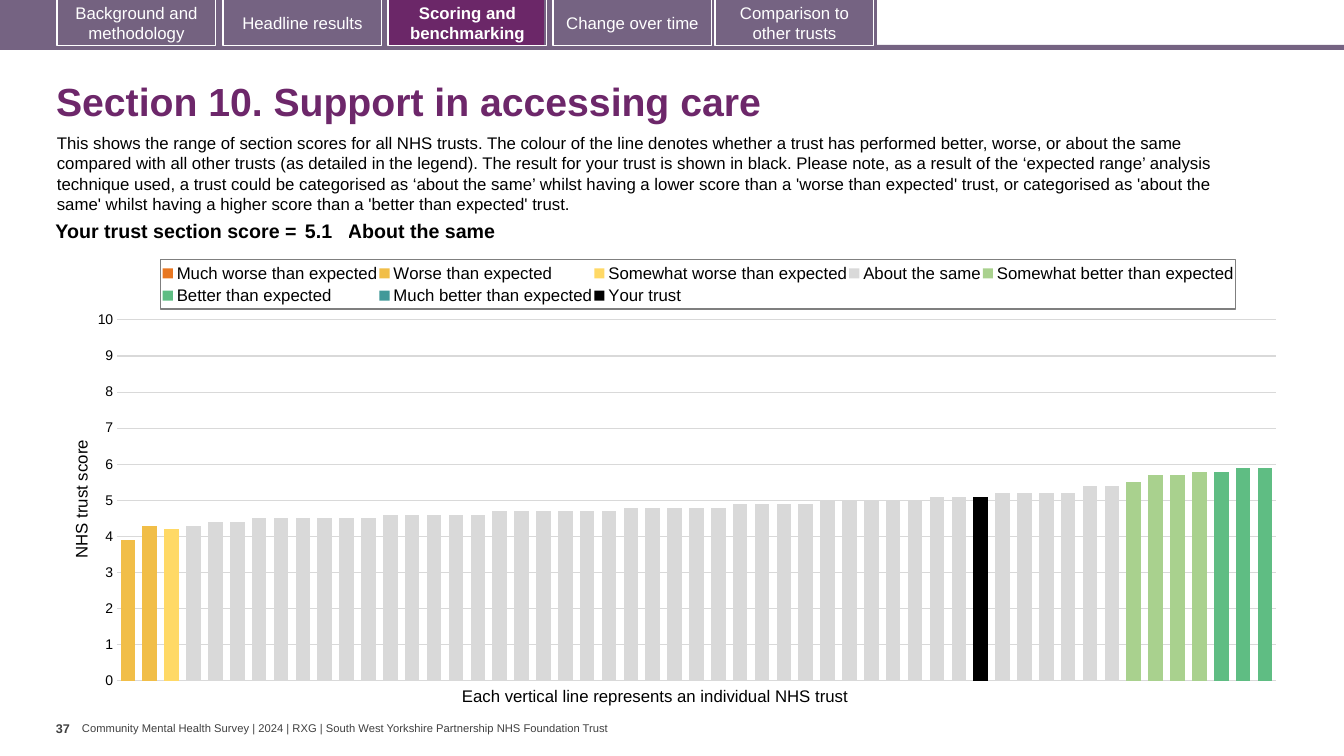
"""Build the section score slide with its benchmarking chart."""
from copy import deepcopy

from lxml import etree
from pptx import Presentation
from pptx.chart.data import CategoryChartData
from pptx.dml.color import RGBColor
from pptx.enum.chart import XL_CHART_TYPE, XL_LEGEND_POSITION, XL_TICK_MARK
from pptx.enum.shapes import MSO_SHAPE
from pptx.enum.text import MSO_ANCHOR, MSO_AUTO_SIZE, PP_ALIGN
from pptx.oxml import parse_xml
from pptx.oxml.ns import nsdecls, qn
from pptx.util import Pt

COLUMN = XL_CHART_TYPE.COLUMN_CLUSTERED
TOP = XL_LEGEND_POSITION.TOP
NO_TICK = XL_TICK_MARK.NONE
RECT = MSO_SHAPE.RECTANGLE
MIDDLE, ANCHOR_TOP = MSO_ANCHOR.MIDDLE, MSO_ANCHOR.TOP
NO_FIT = MSO_AUTO_SIZE.NONE
LEFT, CENTER, RIGHT = PP_ALIGN.LEFT, PP_ALIGN.CENTER, PP_ALIGN.RIGHT

BLACK = RGBColor(0, 0, 0)
WHITE = RGBColor(255, 255, 255)
DARK_GREY = RGBColor(0x40, 0x40, 0x40)
GRID_GREY = RGBColor(0xD9, 0xD9, 0xD9)
BAR = RGBColor(0x75, 0x63, 0x82)
TAB = RGBColor(0x74, 0x62, 0x80)
ACTIVE = RGBColor(0x6B, 0x27, 0x68)
TITLE = RGBColor(0x6D, 0x27, 0x6A)

PX = 914400 / 100.8
SLIDE = (1344, 756)
CHART = (68, 249, 1225, 448)
FONT = "Arial"

HEADING = "Section 10. Support in accessing care"
INTRO = (
    "This shows the range of section scores for all NHS trusts. The colour of the line "
    "denotes whether a trust has performed better, worse, or about the same compared with "
    "all other trusts (as detailed in the legend). The result for your trust is shown in "
    "black. Please note, as a result of the ‘expected range’ analysis technique used, a "
    "trust could be categorised as ‘about the same’ whilst having a lower score than a "
    "'worse than expected' trust, or categorised as 'about the same' whilst having a higher "
    "score than a 'better than expected' trust."
)
X_CAPTION = "Each vertical line represents an individual NHS trust"
Y_CAPTION = "NHS trust score"
PAGE = "37"
FOOTER = ("Community Mental Health Survey | 2024 | RXG | "
          "South West Yorkshire Partnership NHS Foundation Trust")
BANDS = [
    ((0, 45, 1344, 5), BAR),
    ((0, 0, 877, 47), BAR),
    ((59, 0, 155, 46), TAB),
    ((389, 0, 155, 46), ACTIVE),
]
TABS = [
    (57, "Background and methodology", TAB, False),
    (223, "Headline results", None, False),
    (388, "Scoring and benchmarking", None, True),
    (553, "Change over time", BAR, False),
    (715, "Comparison to other trusts", BAR, False),
]
SCORE_ROW = [
    ("Your trust section score =", 265, RIGHT, 4),
    ("5.1", 47, LEFT, 4),
    ("About the same", 867, LEFT, 0),
]
TRUSTS = 53
ABOUT_SAME = (
    [4.3] + [4.4] * 2 + [4.5] * 6 + [4.6] * 5 + [4.7] * 6 + [4.8] * 5 + [4.9] * 4
    + [5] * 5 + [5.1] * 3 + [5.2] * 4 + [5.4] * 2
)
SERIES = [
    ("Much worse than expected", "E87722", 0, []),
    ("Worse than expected", "F1BE48", 0, [3.9, 4.3]),
    ("Somewhat worse than expected", "FFD966", 2, [4.2]),
    ("About the same", "D9D9D9", 3, ABOUT_SAME),
    ("Somewhat better than expected", "A9D18E", 46, [5.5, 5.7, 5.7, 5.8]),
    ("Better than expected", "5FBD83", 50, [5.8, 5.9, 5.9]),
    ("Much better than expected", "419999", 0, []),
    ("Your trust", "000000", 39, [5.1]),
]


def emu(*lengths):
    return [round(n * PX) for n in lengths]


def style(font, size, color, bold=False):
    font.name, font.size, font.bold = FONT, Pt(size), bold
    font.color.rgb = color


def write(tf, text, size, color, bold=False, align=LEFT):
    p = tf.paragraphs[0]
    p.text, p.alignment = text, align
    style(p.font, size, color, bold)
    return p


def add_rect(slide, box, fill, line=None):
    sp = slide.shapes.add_shape(RECT, *emu(*box))
    sp.shadow.inherit = False
    if fill is None:
        sp.fill.background()
    else:
        sp.fill.solid()
        sp.fill.fore_color.rgb = fill
    if line is None:
        sp.line.fill.background()
    else:
        sp.line.color.rgb, sp.line.width = line, Pt(0.75)
    return sp


def add_text(slide, box, text, size, color, bold=False, wrap=False, inset=None, anchor=ANCHOR_TOP):
    tf = slide.shapes.add_textbox(*emu(*box)).text_frame
    tf.word_wrap, tf.vertical_anchor = wrap, anchor
    if inset is not None:
        tf.margin_left = tf.margin_right = 0
        tf.margin_top = tf.margin_bottom = emu(inset)[0]
    write(tf, text, size, color, bold)


def add_score_row(slide):
    widths = emu(*[width for _, width, _, _ in SCORE_ROW])
    x, y, height = emu(36, 217, 31)
    table = slide.shapes.add_table(1, len(SCORE_ROW), x, y, sum(widths), height).table
    table.first_row = table.horz_banding = False
    for i, (text, _, align, side) in enumerate(SCORE_ROW):
        table.columns[i].width = widths[i]
        cell = table.cell(0, i)
        cell.fill.background()
        cell.margin_left = cell.margin_right = emu(side)[0]
        cell.margin_top = cell.margin_bottom = emu(4)[0]
        write(cell.text_frame, text, 14, BLACK, True, align)


def place(parent, index, *box):
    for old in parent.findall(qn("c:layout")):
        parent.remove(old)
    layout = etree.Element(qn("c:layout"))
    manual = etree.SubElement(layout, qn("c:manualLayout"))
    if parent.tag == qn("c:plotArea"):
        etree.SubElement(manual, qn("c:layoutTarget")).set("val", "inner")
    for axis in "xy":
        etree.SubElement(manual, qn(f"c:{axis}Mode")).set("val", "edge")
    for key, length, whole in zip("xywh", box, CHART[2:] * 2):
        etree.SubElement(manual, qn(f"c:{key}")).set("val", str(length / whole))
    parent.insert(index, layout)


def move_last_series_to_right_axis(plot_area):
    bars = plot_area.find(qn("c:barChart"))
    right_bars = deepcopy(bars)
    bars.remove(bars.findall(qn("c:ser"))[-1])
    for ser in right_bars.findall(qn("c:ser"))[:-1]:
        right_bars.remove(ser)
    bars.addnext(right_bars)
    cat, val = plot_area.find(qn("c:catAx")), plot_area.find(qn("c:valAx"))
    right_cat, right_val = deepcopy(cat), deepcopy(val)
    val.addnext(right_val)
    right_val.addnext(right_cat)
    ids = {ax.find(qn("c:axId")).get("val"): new for ax, new in ((cat, "5001"), (val, "5002"))}
    for part in (right_bars, right_cat, right_val):
        for ref in part.findall(qn("c:axId")) + part.findall(qn("c:crossAx")):
            ref.set("val", ids[ref.get("val")])
    right_val.remove(right_val.find(qn("c:majorGridlines")))
    for tag, value in (("axPos", "r"), ("majorTickMark", "out"),
                       ("tickLblPos", "none"), ("crosses", "max")):
        right_val.find(qn(f"c:{tag}")).set("val", value)


def add_score_chart(slide):
    data = CategoryChartData(number_format="0.0")
    data.categories = [str(n + 1) for n in range(TRUSTS)]
    for name, _, first, scores in SERIES:
        data.add_series(name, [None] * first + scores + [None] * (TRUSTS - first - len(scores)))
    chart = slide.shapes.add_chart(COLUMN, *emu(*CHART), data).chart
    style(chart.font, 10, BLACK)
    chart.has_title = False
    plot = chart.plots[0]
    plot.gap_width, plot.overlap, plot.vary_by_categories = 50, 100, False
    for ser, (_, color, _, _) in zip(plot.series, SERIES):
        ser.format.fill.solid()
        ser.format.fill.fore_color.rgb = RGBColor.from_string(color)

    chart.category_axis.visible = False
    axis = chart.value_axis
    axis.minimum_scale, axis.maximum_scale, axis.major_unit = 0, 10, 1
    axis.major_tick_mark = axis.minor_tick_mark = NO_TICK
    axis.format.line.fill.background()
    labels = axis.tick_labels
    labels.number_format, labels.number_format_is_linked = "0", False
    style(labels.font, 10, BLACK)
    grid = axis.major_gridlines.format.line
    grid.color.rgb, grid.width = GRID_GREY, Pt(0.75)
    plot_area = chart.element.find(".//" + qn("c:plotArea"))
    move_last_series_to_right_axis(plot_area)
    place(plot_area, 0, 49, 71, 1159, 361)

    write(axis.axis_title.text_frame, Y_CAPTION, 12, BLACK)
    title = plot_area.find(qn("c:valAx")).find(qn("c:title"))
    title.find(".//" + qn("a:bodyPr")).set("rot", "-5400000")
    place(title, 1, 0, 188)

    chart.has_legend = True
    chart.legend.position, chart.legend.include_in_layout = TOP, False
    style(chart.legend.font, 12, BLACK)
    legend = chart.element.find(".//" + qn("c:legend"))
    place(legend, 1, 93, 11, 1075, 49)
    legend.find(qn("c:txPr")).addprevious(parse_xml(
        f'<c:spPr {nsdecls("c", "a")}><a:ln w="9525"><a:solidFill>'
        '<a:srgbClr val="7F7F7F"/></a:solidFill></a:ln></c:spPr>'))


def main():
    prs = Presentation()
    prs.slide_width, prs.slide_height = emu(*SLIDE)
    slide = prs.slides.add_slide(prs.slide_layouts[5])
    for box, fill in BANDS:
        add_rect(slide, box, fill)
    for x, label, fill, active in TABS:
        tf = add_rect(slide, (x, -1, 159, 47), fill, WHITE).text_frame
        tf.word_wrap, tf.vertical_anchor = True, MIDDLE
        write(tf, label, 12, WHITE, active, CENTER)

    title = slide.shapes.title
    title.left, title.top, title.width, title.height = emu(46, 67, 1259, 73)
    tf = title.text_frame
    tf.auto_size, tf.vertical_anchor = NO_FIT, MIDDLE
    write(tf, HEADING, 28, TITLE, True).line_spacing = 0.9

    add_text(slide, (47, 128, 1223, 92), INTRO, 12, BLACK, wrap=True)
    add_score_chart(slide)
    add_text(slide, (452, 681, 414, 30), X_CAPTION, 12, BLACK)
    add_score_row(slide)
    add_text(slide, (56, 716, 25, 40), PAGE, 9, DARK_GREY, bold=True, inset=5)
    add_text(slide, (82, 722, 534, 13), FOOTER, 8, DARK_GREY, inset=0, anchor=MIDDLE)
    prs.save("out.pptx")


if __name__ == "__main__":
    main()
